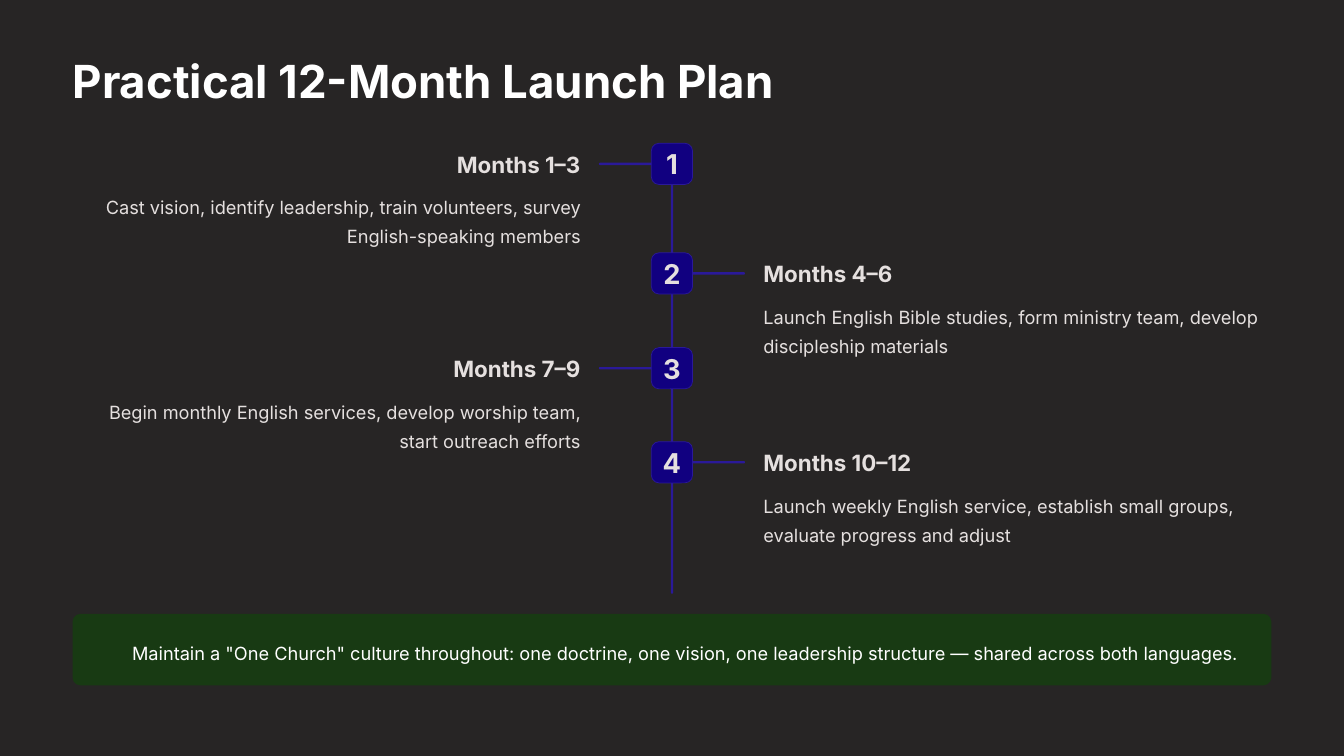
from pptx import Presentation
from pptx.dml.color import RGBColor
from pptx.enum.shapes import MSO_SHAPE
from pptx.enum.text import MSO_ANCHOR, PP_ALIGN
from pptx.util import Cm, Pt

WIDE, HIGH = 33.87, 19.05
EDGE = 1.83          # side margin
THIN = 0.06          # thickness of stem and arms
BADGE = 1.04         # side of a number badge
ARM = 1.37           # length of an arm
COL = 12.8           # width of a text column
HEAD = 5.74          # width of a step heading
MID = WIDE / 2

PALE, WHITE = "E5E0DF", "FFFFFF"
INK, NAVY, LINE, GREEN = "272525", "110080", "2A1999", "183A13"

STEPS = [
    (3.61, "Months 1–3",
     "Cast vision, identify leadership, train volunteers, survey English-speaking members"),
    (6.37, "Months 4–6",
     "Launch English Bible studies, form ministry team, develop discipleship materials"),
    (8.76, "Months 7–9",
     "Begin monthly English services, develop worship team, start outreach efforts"),
    (11.13, "Months 10–12",
     "Launch weekly English service, establish small groups, evaluate progress and adjust"),
]


def paint(fill, color):
    fill.solid()
    fill.fore_color.rgb = RGBColor.from_string(color)


def block(slide, box, color, round_by=0.5, edge=None):
    shape = slide.shapes.add_shape(MSO_SHAPE.ROUNDED_RECTANGLE, *map(Cm, box))
    shape.adjustments[0] = round_by
    shape.shadow.inherit = False
    paint(shape.fill, color)
    if edge:
        paint(shape.line.fill, edge)
        shape.line.width = Pt(0.5)
    else:
        shape.line.fill.background()


def write(slide, box, text, size, color=PALE, bold=False, align=PP_ALIGN.LEFT,
          space=1.04, wrap=False, anchor=MSO_ANCHOR.TOP):
    frame = slide.shapes.add_textbox(*map(Cm, box)).text_frame
    frame.margin_left = frame.margin_right = 0
    frame.margin_top = frame.margin_bottom = 0
    frame.word_wrap = wrap
    frame.vertical_anchor = anchor
    frame.text = text
    para = frame.paragraphs[0]
    para.alignment = align
    para.line_spacing = space
    font = para.runs[0].font
    font.name, font.size, font.bold = "Inter", Pt(size), bold
    font.color.rgb = RGBColor.from_string(color)


def add_step(slide, top, num, head, body):
    """Odd steps sit left of the stem, even steps right of it."""
    left = num % 2 == 1
    side = PP_ALIGN.RIGHT if left else PP_ALIGN.LEFT
    col = EDGE if left else WIDE - EDGE - COL
    # Arm and badge
    arm = MID - BADGE / 2 - ARM + 0.05 if left else MID + BADGE / 2 - 0.05
    block(slide, (arm, top + 0.49, ARM, THIN), LINE)
    block(slide, (MID - BADGE / 2, top, BADGE, BADGE), NAVY, 0.187, LINE)
    write(slide, (MID - 0.34, top + 0.09, 0.68, 0.86), str(num), 19.5, bold=True,
          align=PP_ALIGN.CENTER, space=1.0, anchor=MSO_ANCHOR.MIDDLE)
    # Heading and text
    start = col + COL - HEAD if left else col
    write(slide, (start, top + 0.17, HEAD, 0.71), head, 16, bold=True, align=side)
    write(slide, (col, top + 1.16, COL, 1.47), body, 13, align=side,
          space=1.33, wrap=True)


def add_plan(slide, top, high):
    block(slide, (MID - THIN / 2, top, THIN, high), LINE)
    for num, (y, head, body) in enumerate(STEPS, 1):
        add_step(slide, y, num, head, body)


def add_note(slide, left, top, wide, high):
    block(slide, (left, top, wide, high), GREEN, 0.108)
    write(slide, (left + 1.5, top + 0.53, wide - 0.28, 0.74),
          'Maintain a "One Church" culture throughout: one doctrine, one vision, '
          'one leadership structure — shared across both languages.',
          13, WHITE, space=1.33)


def main():
    deck = Presentation()
    deck.slide_width, deck.slide_height = Cm(WIDE), Cm(HIGH)
    slide = deck.slides.add_slide(deck.slide_layouts[6])
    paint(slide.background.fill, INK)
    # Title
    write(slide, (EDGE, 1.27, 19.4, 1.45), "Practical 12-Month Launch Plan",
          32.5, WHITE, bold=True)
    # Timeline
    add_plan(slide, 3.61, 11.35)
    # Closing note
    add_note(slide, EDGE, 15.47, WIDE - 2 * EDGE, 1.8)
    deck.save("out.pptx")


if __name__ == "__main__":
    main()
